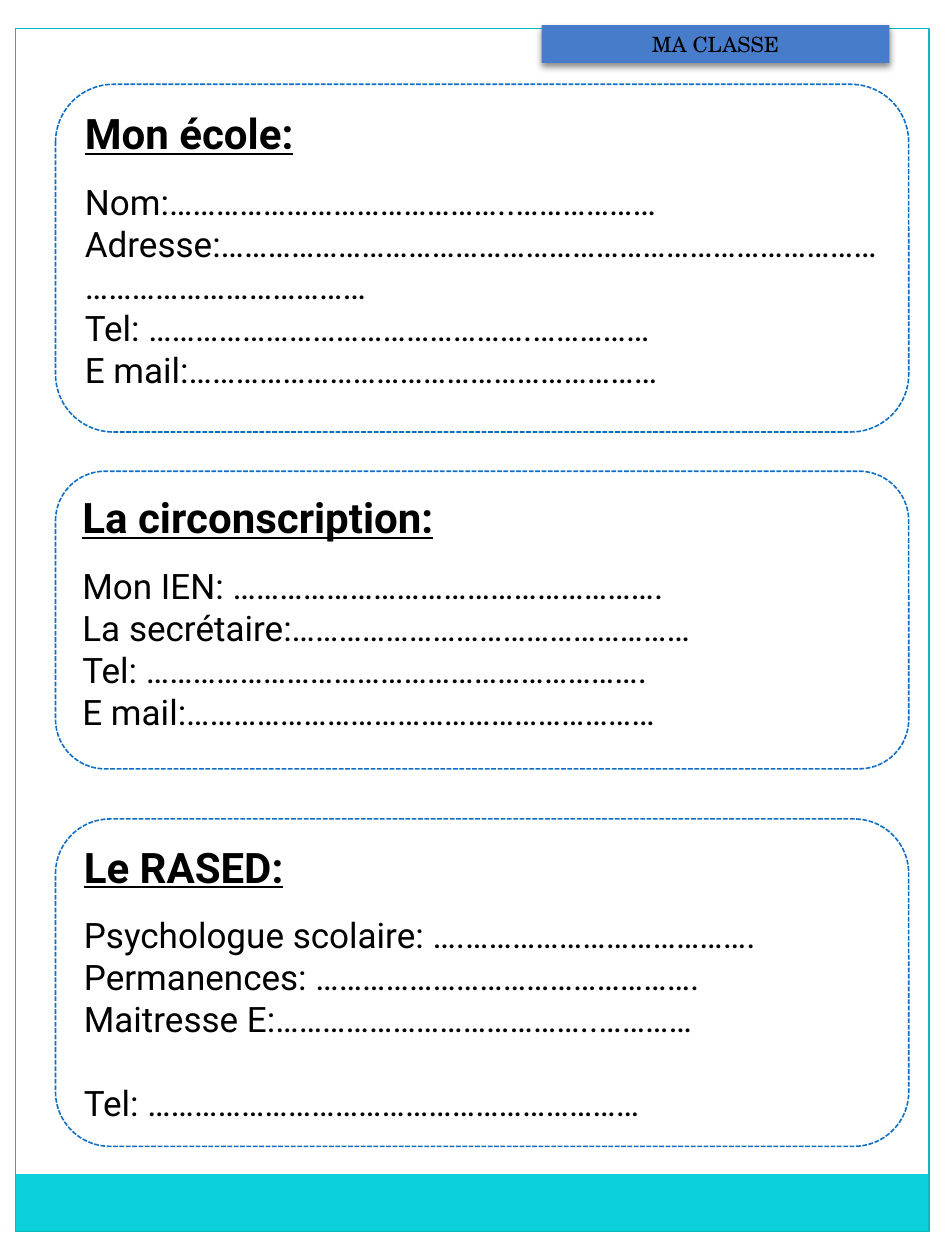
"""Build the "Ma classe" contact sheet: three dashed cards inside a framed page."""
from dataclasses import dataclass, field
from typing import NamedTuple, Optional

from pptx import Presentation
from pptx import util as u
from pptx.dml.color import RGBColor
from pptx.enum import dml, shapes, text
from pptx.oxml import parse_xml
from pptx.oxml.ns import nsdecls


@dataclass(frozen=True)
class Theme:
    ink: str = "000000"
    paper: str = "FFFFFF"
    band: str = "0BD0D9"
    frame: str = "0AB8BF"
    card_line: str = "0F6FC6"
    tab: str = "467CC9"
    card_font: str = "Roboto"
    tab_font: str = "TeX Gyre Schola"
    title_size: float = 24
    entry_size: float = 20
    tab_size: float = 12
    frame_width: float = 0.75
    card_width: float = 0.9


class Area(NamedTuple):
    left: float
    top: float
    width: float
    height: float


class Entry(NamedTuple):
    text: str
    gap: float = 0


@dataclass(frozen=True)
class Card:
    title: str
    top: float
    height: float
    entries: list[Entry] = field(default_factory=list)


THEME = Theme()
CARD_LEFT, CARD_WIDTH = 1.12, 17.2
FRAME = Area(0.31, 0.58, 18.42, 24.25)
BAND = Area(0.31, 23.67, 18.42, 1.15)
TAB = Area(10.92, 0.51, 7.01, 0.76)

CARDS = [
    Card("Mon école:", 1.7, 7.01, [
        Entry("Nom:……………………………………..………………", 13),
        Entry("Adresse:…………………………………………………………………………………………………………"),
        Entry("Tel: ………………………………………….……………"),
        Entry("E mail:……………………………………………………"),
    ]),
    Card("La circonscription:", 9.5, 6, [
        Entry("Mon IEN: ……………………………………………….", 12.5),
        Entry("La secrétaire:……………………………………………"),
        Entry("Tel: ……………………………………………………….") ,
        Entry("E mail:……………………………………………………"),
    ]),
    Card("Le RASED:", 16.51, 6.6, [
        Entry("Psychologue scolaire: ….……………………………….", 12.5),
        Entry("Permanences: …………………………………………."),
        Entry("Maitresse E:…………………………………..…………"),
        Entry("Tel: ………………………………………………………", 24),
    ]),
]


def add_box(page, kind, area: Area, fill: Optional[str] = None,
            line: Optional[str] = None, width: float = 0):
    """Add a shadowless shape with the given fill and outline."""
    box = page.shapes.add_shape(kind, *(u.Cm(length) for length in area))
    box.shadow.inherit = False
    if fill:
        box.fill.solid()
        box.fill.fore_color.rgb = RGBColor.from_string(fill)
    else:
        box.fill.background()
    if line:
        box.line.color.rgb = RGBColor.from_string(line)
        box.line.width = u.Pt(width)
    else:
        box.line.fill.background()
    return box


def write(para, words: str, font: str, size: float, heading: bool = False,
          align=text.PP_ALIGN.LEFT) -> None:
    """Fill a paragraph and format its run."""
    para.text = words
    para.alignment = align
    span = para.runs[0]
    span.font.name = font
    span.font.size = u.Pt(size)
    span.font.bold = heading
    span.font.underline = heading
    span.font.color.rgb = RGBColor.from_string(THEME.ink)


def add_card(page, card: Card) -> None:
    """Draw a dashed card with its heading and dotted entries."""
    area = Area(CARD_LEFT, card.top, CARD_WIDTH, card.height)
    box = add_box(page, shapes.MSO_SHAPE.ROUNDED_RECTANGLE, area,
                  THEME.paper, THEME.card_line, THEME.card_width)
    box.line.dash_style = dml.MSO_LINE.SQUARE_DOT
    frame = box.text_frame
    frame.word_wrap = True
    frame.vertical_anchor = text.MSO_ANCHOR.TOP
    write(frame.paragraphs[0], card.title, THEME.card_font, THEME.title_size, heading=True)
    for entry in card.entries:
        para = frame.add_paragraph()
        write(para, entry.text, THEME.card_font, THEME.entry_size)
        para.space_before = u.Pt(entry.gap)


def add_tab(page, words: str) -> None:
    """Draw the shadowed label at the top of the page."""
    box = add_box(page, shapes.MSO_SHAPE.RECTANGLE, TAB, THEME.tab)
    frame = box.text_frame
    frame.word_wrap = True
    frame.auto_size = text.MSO_AUTO_SIZE.SHAPE_TO_FIT_TEXT
    frame.vertical_anchor = text.MSO_ANCHOR.TOP
    write(frame.paragraphs[0], words, THEME.tab_font, THEME.tab_size,
          align=text.PP_ALIGN.CENTER)
    effects = box._element.spPr.find("{*}effectLst")
    effects.append(parse_xml(
        f'<a:outerShdw {nsdecls("a")} blurRad="{u.Pt(4)}" dist="{u.Pt(2)}" '
        f'dir="5400000" rotWithShape="0"><a:srgbClr val="{THEME.ink}">'
        '<a:alpha val="45000"/></a:srgbClr></a:outerShdw>'))


def main() -> None:
    """Assemble and save the sheet."""
    deck = Presentation()
    deck.slide_width, deck.slide_height = u.Cm(19.05), u.Cm(25.4)
    page = deck.slides.add_slide(deck.slide_layouts[6])
    add_box(page, shapes.MSO_SHAPE.RECTANGLE, BAND, THEME.band)
    add_box(page, shapes.MSO_SHAPE.RECTANGLE, FRAME, line=THEME.frame, width=THEME.frame_width)
    for card in CARDS:
        add_card(page, card)
    add_tab(page, "MA CLASSE")
    deck.save("out.pptx")


if __name__ == "__main__":
    main()
